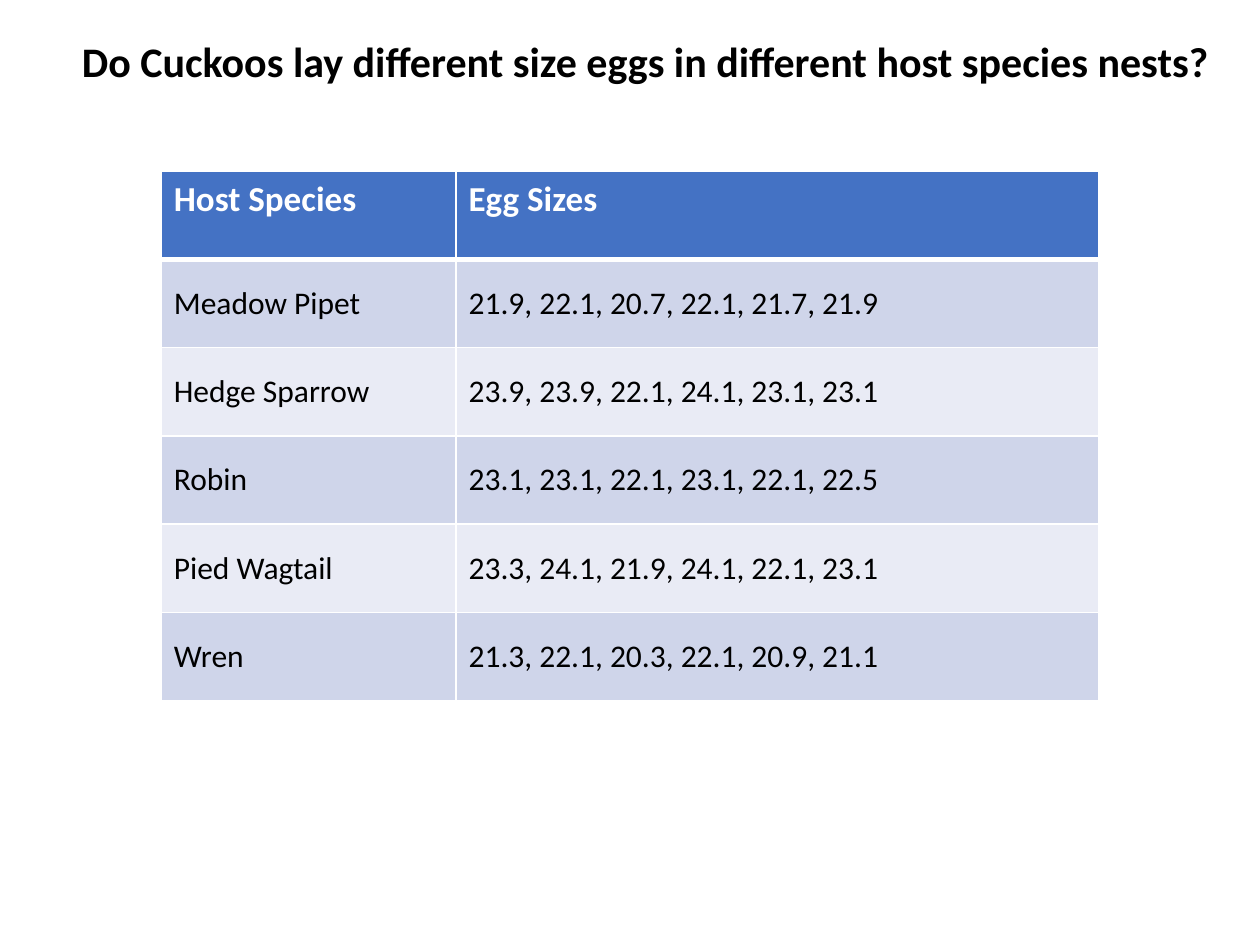
from dataclasses import dataclass

from lxml import etree
from pptx import Presentation
from pptx.dml.color import RGBColor
from pptx.enum import text
from pptx.oxml.ns import qn
from pptx.util import Inches, Pt


@dataclass(frozen=True)
class Theme:
    font: str = "Calibri"
    ink: str = "000000"
    paper: str = "FFFFFF"
    header: str = "4472C4"
    bands: tuple = ("CFD5EA", "E9EBF5")
    title_size: int = 24
    header_size: int = 20
    body_size: int = 18
    rule: int = 1
    header_rule: int = 3


HEADINGS = ("Host Species", "Egg Sizes")
EGG_SIZES = {
    "Meadow Pipet": (21.9, 22.1, 20.7, 22.1, 21.7, 21.9),
    "Hedge Sparrow": (23.9, 23.9, 22.1, 24.1, 23.1, 23.1),
    "Robin": (23.1, 23.1, 22.1, 23.1, 22.1, 22.5),
    "Pied Wagtail": (23.3, 24.1, 21.9, 24.1, 22.1, 23.1),
    "Wren": (21.3, 22.1, 20.3, 22.1, 20.9, 21.1),
}


class SlideBuilder:
    def __init__(self, s, theme):
        self.s = s
        self.theme = theme

    def add_text(self, tf, content, size, color, bold=False):
        p = tf.paragraphs[0]
        p.alignment = text.PP_ALIGN.LEFT
        r = p.add_run()
        r.text = content
        font = {"name": self.theme.font, "size": Pt(size), "bold": bold}
        for name, value in font.items():
            setattr(r.font, name, value)
        r.font.color.rgb = RGBColor.from_string(color)

    def title(self, content, left, top, width, height):
        sp = self.s.shapes.title
        box = {"left": left, "top": top, "width": width, "height": height}
        for name, value in box.items():
            setattr(sp, name, Inches(value))
        tf = sp.text_frame
        frame = {"word_wrap": True, "auto_size": text.MSO_AUTO_SIZE.SHAPE_TO_FIT_TEXT,
                 "vertical_anchor": text.MSO_ANCHOR.TOP}
        for name, value in frame.items():
            setattr(tf, name, value)
        self.add_text(tf, content, self.theme.title_size, self.theme.ink, bold=True)

    def borders(self, cell, **widths):
        """Draw cell edges; widths maps L, R, T and B, in that order, to points."""
        tc_pr = cell._tc.get_or_add_tcPr()
        for edge, width in widths.items():
            ln = etree.SubElement(tc_pr, qn(f"a:ln{edge}"), w=str(Pt(width)))
            fill = etree.SubElement(ln, qn("a:solidFill"))
            etree.SubElement(fill, qn("a:srgbClr"), val=self.theme.paper)

    def table(self, rows, left, top, col_widths, row_height):
        """Build a table with a header row above banded body rows."""
        t = self.theme
        frame = self.s.shapes.add_table(
            len(rows), len(col_widths), Inches(left), Inches(top),
            Inches(sum(col_widths)), Inches(row_height * len(rows)))
        tbl = frame.table
        for col, width in zip(tbl.columns, col_widths):
            col.width = Inches(width)
        for i, values in enumerate(rows):
            tbl.rows[i].height = Inches(row_height)
            is_header = i == 0
            fill = t.header if is_header else t.bands[(i - 1) % len(t.bands)]
            size = t.header_size if is_header else t.body_size
            color = t.paper if is_header else t.ink
            for j, value in enumerate(values):
                cell = tbl.cell(i, j)
                self.borders(cell, L=t.rule, R=t.rule,
                             T=t.header_rule if i == 1 else t.rule,
                             B=t.header_rule if is_header else t.rule)
                cell.fill.solid()
                cell.fill.fore_color.rgb = RGBColor.from_string(fill)
                if not is_header:
                    cell.vertical_anchor = text.MSO_ANCHOR.MIDDLE
                self.add_text(cell.text_frame, value, size, color, bold=is_header)


def main():
    prs = Presentation()
    prs.slide_width, prs.slide_height = Inches(10), Inches(7.5)
    title_only = prs.slide_layouts[5]
    slide = SlideBuilder(prs.slides.add_slide(title_only), Theme())
    slide.title("Do Cuckoos lay different size eggs in different host species nests?",
                0.55, 0.23, 9.26, 0.5)
    rows = [HEADINGS]
    rows += [(host, ", ".join(map(str, sizes))) for host, sizes in EGG_SIZES.items()]
    slide.table(rows, left=1.28, top=1.36, col_widths=(2.34, 5.1), row_height=0.7)
    prs.save("out.pptx")


if __name__ == "__main__":
    main()
